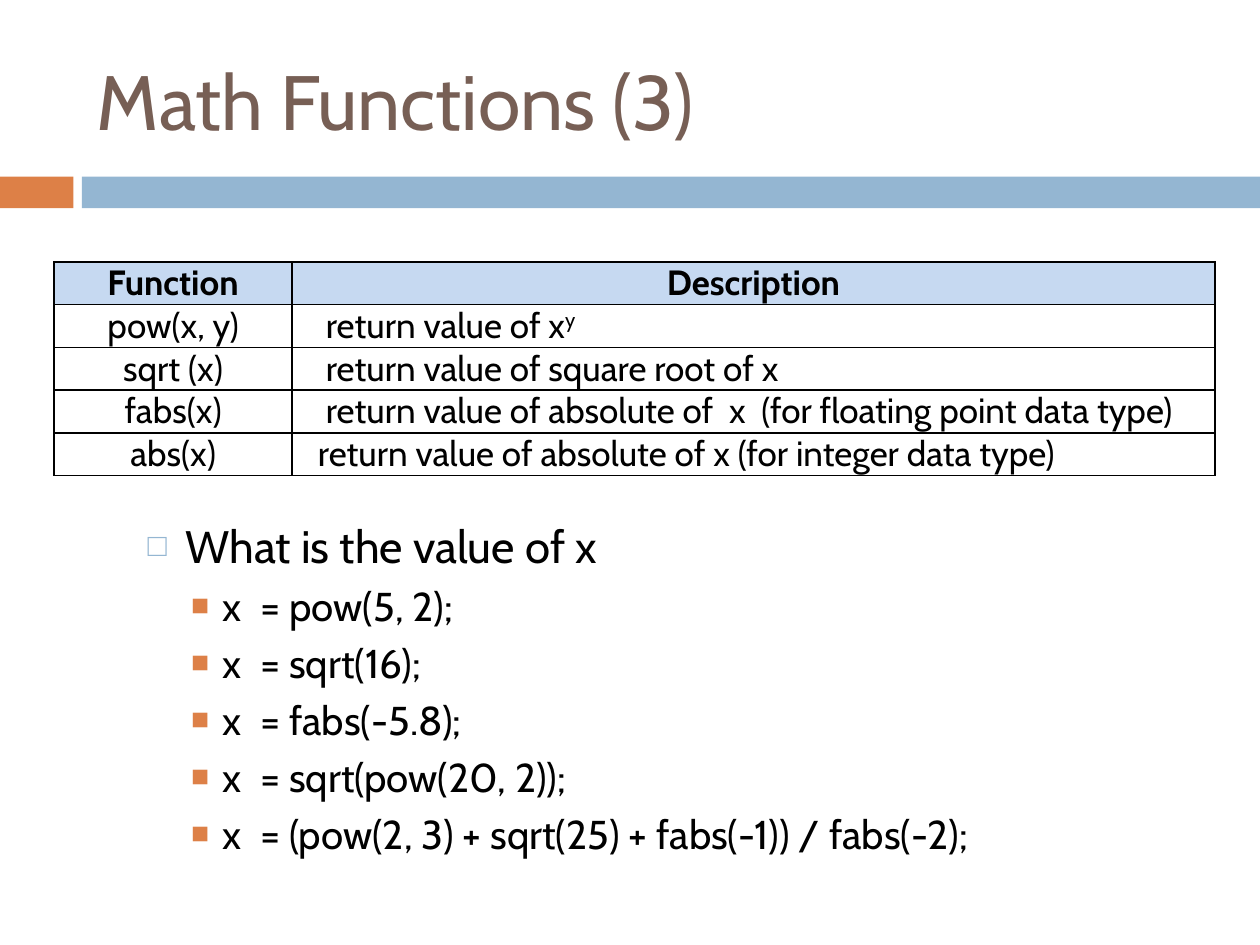
import pptx
import pptx.util
import pptx.dml.color
import pptx.enum.shapes
import pptx.enum.text
import pptx.oxml
import pptx.oxml.ns

Cm, Pt = pptx.util.Cm, pptx.util.Pt
ALIGN = pptx.enum.text.PP_ALIGN
MIDDLE = pptx.enum.text.MSO_ANCHOR.MIDDLE

TITLE = "Math Functions (3)"
BARS = [(0, 1.48, "DD8047"), (1.65, 23.75, "94B6D2")]
HEADINGS = ("Function", "Description")
FUNCTIONS = [
    ("pow(x, y)", "return value of x", "y", 0.68),
    ("sqrt (x)", "return value of square root of x", "", 0.68),
    ("fabs(x)", "return value of absolute of  x  (for floating point data type)", "", 0.68),
    ("abs(x)", "return value of absolute of x (for integer data type)", "", 0.52),
]
QUESTION = "What is the value of x"
EXERCISES = [
    "x  = pow(5, 2);",
    "x  = sqrt(16);",
    "x  = fabs(-5.8);",
    "x  = sqrt(pow(20, 2));",
    "x  = (pow(2, 3) + sqrt(25) + fabs(-1)) / fabs(-2);",
]
LEVELS = {
    1: dict(size=26, before=5.5, left=1.78, hang=0.76, mark="□", color="94B6D2", scale=70),
    2: dict(size=23, before=5, left=2.54, hang=0.64, mark="■", color="DD8047", scale=75),
}
COLUMN_WIDTHS = (4.8, 18.6)
ROW_HEIGHT = 0.86


def rgb(value):
    return pptx.dml.color.RGBColor.from_string(value)


def style(para, size, color="000000", bold=False):
    for span in para.runs:
        span.font.name = "Cabin"
        span.font.size = Pt(size)
        span.font.bold = bold
        span.font.color.rgb = rgb(color)


def element(xml):
    return pptx.oxml.parse_xml(xml.replace(" ", f" {pptx.oxml.ns.nsdecls('a')} ", 1))


def place(box, left, top, width, height):
    box.left, box.top, box.width, box.height = map(Cm, (left, top, width, height))


def add_bullet(para, level):
    look = LEVELS[level]
    para.level = level
    para.space_before = Pt(look["before"])
    properties = para._p.get_or_add_pPr()
    properties.set("marL", str(Cm(look["left"])))
    properties.set("indent", str(-Cm(look["hang"])))
    for xml in (
        f'<a:buClr ><a:srgbClr val="{look["color"]}"/></a:buClr>',
        f'<a:buSzPct val="{look["scale"] * 1000}"/>',
        f'<a:buChar char="{look["mark"]}"/>',
    ):
        properties.append(element(xml))
    style(para, look["size"])


def fill_cell(cell, text, power="", margin=0.18, centred=True, heading=False):
    cell.margin_left, cell.margin_right = Cm(margin), Cm(0.18)
    cell.margin_top = cell.margin_bottom = 0
    para = cell.text_frame.paragraphs[0]
    para.text = text
    para.alignment = ALIGN.CENTER if centred else ALIGN.LEFT
    if power:
        span = para.add_run()
        span.text = power
        span._r.get_or_add_rPr().set("baseline", "30000")
    style(para, 20, bold=heading)
    if heading:
        cell.fill.solid()
        cell.fill.fore_color.rgb = rgb("C6D9F1")
    else:
        cell.fill.background()
    for index, side in enumerate("LRTB"):
        cell._tc.get_or_add_tcPr().insert(index, element(
            f'<a:ln{side} w="{Pt(1)}"><a:solidFill><a:srgbClr val="000000"/>'
            f'</a:solidFill></a:ln{side}>'))


def add_functions(page):
    count = len(FUNCTIONS) + 1
    table = page.shapes.add_table(
        count, 2, Cm(1.09), Cm(5.28), Cm(sum(COLUMN_WIDTHS)), Cm(ROW_HEIGHT * count)).table
    for column, width in zip(table.columns, COLUMN_WIDTHS):
        column.width = Cm(width)
    for row in table.rows:
        row.height = Cm(ROW_HEIGHT)
    for index, heading in enumerate(HEADINGS):
        fill_cell(table.cell(0, index), heading, heading=True)
    for index, (name, description, power, margin) in enumerate(FUNCTIONS, 1):
        fill_cell(table.cell(index, 0), name)
        fill_cell(table.cell(index, 1), description, power, margin, centred=False)


def main():
    deck = pptx.Presentation()
    deck.slide_width, deck.slide_height = Cm(25.4), Cm(19.05)
    page = deck.slides.add_slide(deck.slide_layouts[1])

    for left, width, color in BARS:
        bar = page.shapes.add_shape(
            pptx.enum.shapes.MSO_SHAPE.RECTANGLE, Cm(left), Cm(3.56), Cm(width), Cm(0.64))
        bar.shadow.inherit = False
        bar.fill.solid()
        bar.fill.fore_color.rgb = rgb(color)
        bar.line.fill.background()

    title = page.shapes.title
    place(title, 1.7, 0.64, 22.66, 2.74)
    title.text_frame.text = TITLE
    title.text_frame.vertical_anchor = MIDDLE
    title.text_frame.paragraphs[0].alignment = ALIGN.LEFT
    style(title.text_frame.paragraphs[0], 44, "775F55")

    add_functions(page)

    body = page.placeholders[1]
    place(body, 1.7, 10.31, 22.66, 7.62)
    body.text_frame.text = "\n".join([QUESTION] + EXERCISES)
    body.text_frame.auto_size = pptx.enum.text.MSO_AUTO_SIZE.NONE
    for index, para in enumerate(body.text_frame.paragraphs):
        add_bullet(para, 2 if index else 1)

    deck.save("out.pptx")


if __name__ == "__main__":
    main()
